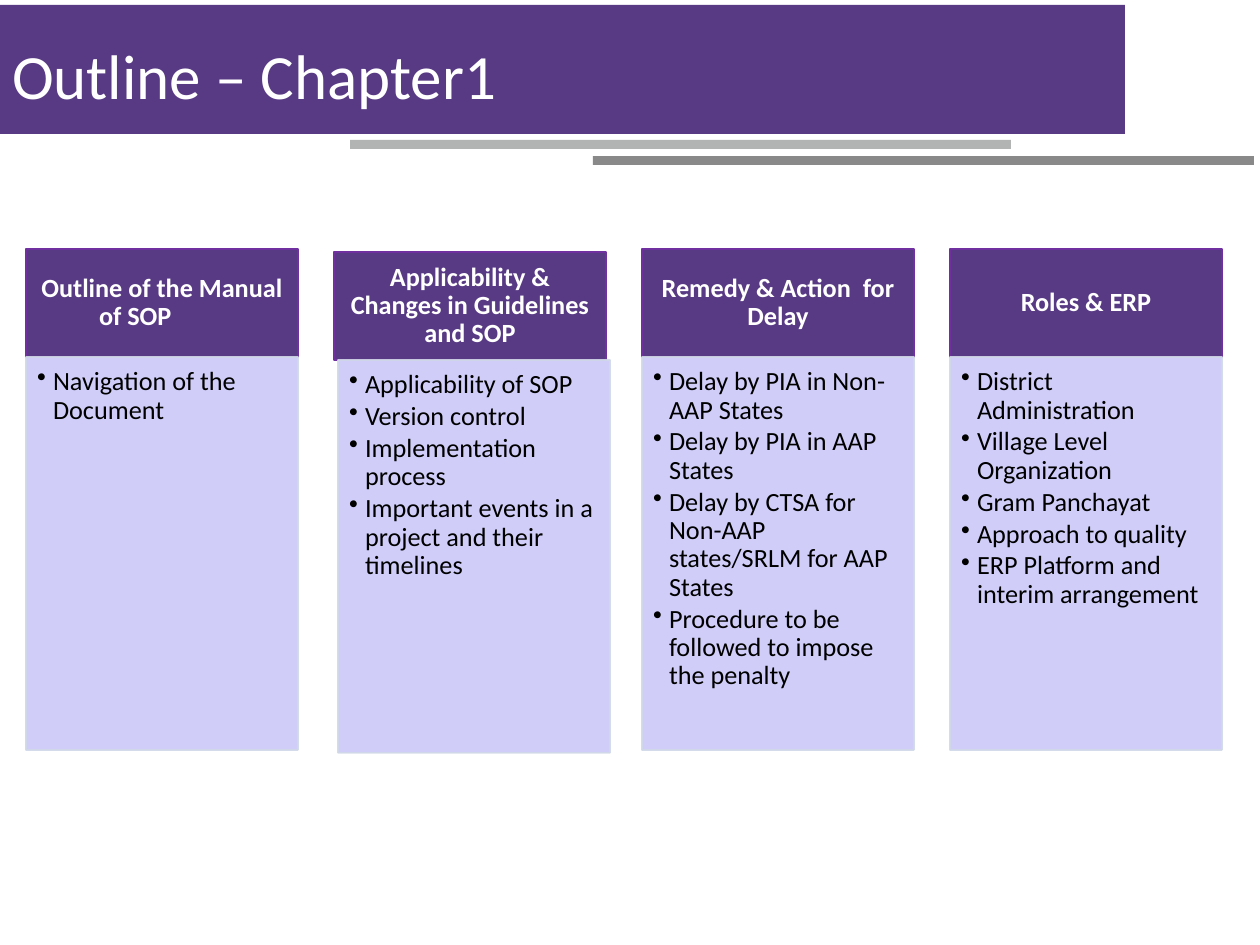
from dataclasses import dataclass

import pptx
import pptx.dml.color
import pptx.enum.shapes
import pptx.enum.text
import pptx.oxml
import pptx.oxml.ns
import pptx.util

PX = 914400 / 126
ANCHOR = pptx.enum.text.MSO_ANCHOR
ALIGN = pptx.enum.text.PP_ALIGN


@dataclass(frozen=True)
class Theme:
    font: str = "Calibri"
    purple: str = "583A84"
    violet: str = "7030A0"
    lilac: str = "CBC9F9"
    pale: str = "D0D8E8"
    light_grey: str = "B2B3B3"
    dark_grey: str = "898989"
    white: str = "FFFFFF"
    black: str = "000000"
    title_size: int = 36
    text_size: int = 15
    line_spacing: float = 0.9


@dataclass(frozen=True)
class Box:
    left: int
    top: int
    width: int
    height: int


@dataclass(frozen=True)
class Column:
    heading: str
    items: tuple[str, ...]
    heading_shift: tuple[int, int] = (0, 0)
    list_shift: tuple[int, int] = (0, 0)


THEME = Theme()
TITLE = Box(0, 15, 1135, 129)
BARS = (
    (Box(0, 5, 1125, 129), THEME.purple),
    (Box(593, 156, 661, 9), THEME.dark_grey),
    (Box(350, 140, 661, 9), THEME.light_grey),
)
COLUMNS_LEFT, COLUMNS_TOP, COLUMN_PITCH = 26, 249, 308
COLUMN_WIDTH, HEADING_HEIGHT, LIST_HEIGHT = 272, 108, 393
HEADING_INSETS = (15, 9, 15, 9)
LIST_INSETS = (11, 11, 15, 16)
BULLET_INDENT = 16
COLUMNS = (
    Column("Outline of the Manual of SOP\t", ("Navigation of the Document",)),
    Column(
        "Applicability & Changes in Guidelines and SOP",
        (
            "Applicability of SOP",
            "Version control",
            "Implementation process",
            "Important events in a project and their timelines",
        ),
        heading_shift=(0, 3),
        list_shift=(4, 3),
    ),
    Column(
        "Remedy & Action  for Delay",
        (
            "Delay by PIA in Non-AAP States",
            "Delay by PIA in AAP States",
            "Delay by CTSA for Non-AAP states/SRLM for AAP States",
            "Procedure to be followed to impose the penalty",
        ),
    ),
    Column(
        "Roles & ERP",
        (
            "District Administration",
            "Village Level Organization",
            "Gram Panchayat",
            "Approach to quality",
            "ERP Platform and interim arrangement",
        ),
    ),
)


def px(length: int) -> pptx.util.Emu:
    return pptx.util.Emu(round(length * PX))


def rgb(colour: str) -> pptx.dml.color.RGBColor:
    return pptx.dml.color.RGBColor.from_string(colour)


def set_opacity(colour_format, percent: int) -> None:
    """Add an alpha value to the solid colour of a fill or a line."""
    solid = colour_format._xPr.find(pptx.oxml.ns.qn("a:solidFill"))
    alpha = pptx.oxml.parse_xml(
        f'<a:alpha {pptx.oxml.ns.nsdecls("a")} val="{percent * 1000}"/>')
    solid[0].append(alpha)


def add_rectangle(page, box: Box, fill: str, line: str | None = None, opacity: int = 100):
    shape = page.shapes.add_shape(
        pptx.enum.shapes.MSO_SHAPE.RECTANGLE,
        px(box.left), px(box.top), px(box.width), px(box.height))
    shape.shadow.inherit = False
    shape.fill.solid()
    shape.fill.fore_color.rgb = rgb(fill)
    if line is None:
        shape.line.fill.background()
    else:
        shape.line.color.rgb = rgb(line)
        shape.line.width = pptx.util.Pt(1)
    if opacity < 100:
        set_opacity(shape.fill, opacity)
        set_opacity(shape.line.fill, opacity)
    return shape


def set_frame(frame, anchor, insets: tuple[int, int, int, int]) -> None:
    frame.word_wrap = True
    frame.auto_size = pptx.enum.text.MSO_AUTO_SIZE.NONE
    frame.vertical_anchor = anchor
    frame.margin_left, frame.margin_top, frame.margin_right, frame.margin_bottom = map(px, insets)


def add_text(para, text: str, size: int, colour: str, align, bold: bool = False) -> None:
    para.alignment = align
    para.line_spacing = THEME.line_spacing
    span = para.add_run()
    span.text = text
    span.font.name = THEME.font
    span.font.size = pptx.util.Pt(size)
    span.font.bold = bold
    span.font.color.rgb = rgb(colour)


def add_bullet(para) -> None:
    properties = para._p.get_or_add_pPr()
    properties.set("marL", str(px(BULLET_INDENT)))
    properties.set("indent", str(-px(BULLET_INDENT)))
    properties.append(pptx.oxml.parse_xml(
        f'<a:buChar {pptx.oxml.ns.nsdecls("a")} char="•"/>'))


def add_column(page, column: Column, left: int) -> None:
    shift_x, shift_y = column.heading_shift
    heading = add_rectangle(
        page,
        Box(left + shift_x, COLUMNS_TOP + shift_y, COLUMN_WIDTH, HEADING_HEIGHT),
        THEME.purple, THEME.violet)
    set_frame(heading.text_frame, ANCHOR.MIDDLE, HEADING_INSETS)
    add_text(heading.text_frame.paragraphs[0], column.heading,
             THEME.text_size, THEME.white, ALIGN.CENTER, bold=True)

    shift_x, shift_y = column.list_shift
    panel = add_rectangle(
        page,
        Box(left + shift_x, COLUMNS_TOP + HEADING_HEIGHT + shift_y, COLUMN_WIDTH, LIST_HEIGHT),
        THEME.lilac, THEME.pale, opacity=90)
    frame = panel.text_frame
    set_frame(frame, ANCHOR.TOP, LIST_INSETS)
    for index, item in enumerate(column.items):
        para = frame.add_paragraph() if index else frame.paragraphs[0]
        add_bullet(para)
        para.space_after = pptx.util.Pt(2)
        add_text(para, item, THEME.text_size, THEME.black, ALIGN.LEFT)


def add_title(page, text: str) -> None:
    title = page.shapes.title
    title.left, title.top = px(TITLE.left), px(TITLE.top)
    title.width, title.height = px(TITLE.width), px(TITLE.height)
    set_frame(title.text_frame, ANCHOR.MIDDLE, (12, 6, 12, 6))
    add_text(title.text_frame.paragraphs[0], text,
             THEME.title_size, THEME.white, ALIGN.LEFT)
    page.shapes._spTree.append(title._element)


def main() -> None:
    deck = pptx.Presentation()
    deck.slide_width, deck.slide_height = pptx.util.Inches(10), pptx.util.Inches(7.5)
    page = deck.slides.add_slide(deck.slide_layouts.get_by_name("Title Only"))
    for box, fill in BARS:
        add_rectangle(page, box, fill)
    add_title(page, "Outline – Chapter1")
    for index, column in enumerate(COLUMNS):
        add_column(page, column, COLUMNS_LEFT + index * COLUMN_PITCH)
    deck.save("out.pptx")


if __name__ == "__main__":
    main()
